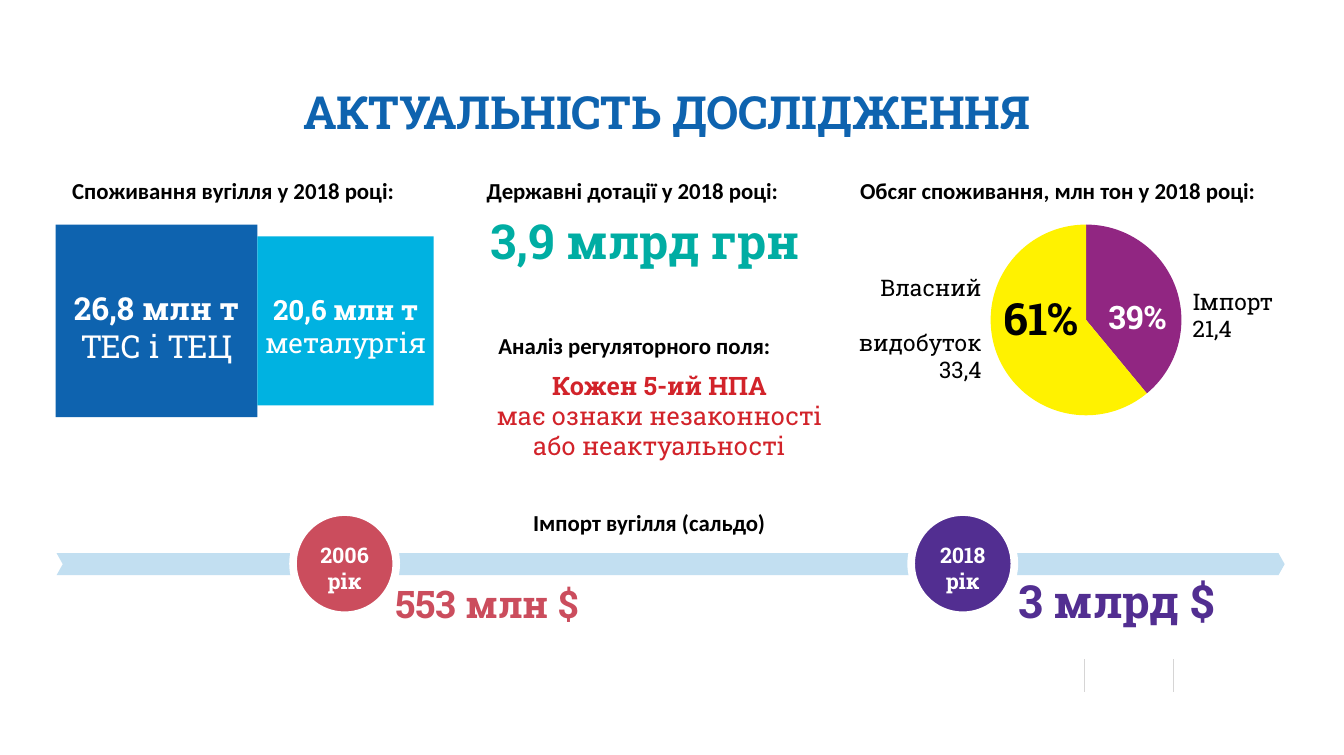
"""Build the slide on the relevance of the coal market study."""
from dataclasses import dataclass

import lxml.etree
import pptx
import pptx.chart.data
import pptx.dml.color
import pptx.enum.chart
import pptx.enum.shapes
import pptx.enum.text
import pptx.oxml
import pptx.oxml.ns
import pptx.util

PX = 9144
SLAB = "Roboto Slab"
WHITE = "FFFFFF"
BLACK = "000000"
CRIMSON = "CB4D5D"
VIOLET = "522E91"
RED = "D2232A"
LEFT = pptx.enum.text.PP_ALIGN.LEFT
CENTER = pptx.enum.text.PP_ALIGN.CENTER
RIGHT = pptx.enum.text.PP_ALIGN.RIGHT
SHAPES = pptx.enum.shapes.MSO_SHAPE


@dataclass(frozen=True)
class Style:
    """Character format; tracking is in hundredths of a point."""
    size: float
    colour: str
    bold: bool = True
    font: str = SLAB
    tracking: int = -5


@dataclass(frozen=True)
class Line:
    """One paragraph with a single style."""
    text: str
    style: Style
    before: float = 0


@dataclass(frozen=True)
class Label:
    """A text box placed in px."""
    left: int
    top: int
    width: int
    height: int
    lines: tuple[Line, ...]
    align: pptx.enum.text.PP_ALIGN = LEFT


@dataclass(frozen=True)
class Block:
    """A filled shape carrying centred text."""
    kind: SHAPES
    left: int
    top: int
    width: int
    height: int
    fill: str
    lines: tuple[Line, ...] = ()
    inset: int = 0
    outline: float = 0
    middle: bool = False


@dataclass(frozen=True)
class Slice:
    """One sector of the consumption pie, in percent."""
    name: str
    share: int
    colour: str


HEADING = Style(18, BLACK, font="Calibri", tracking=-2)
PLAIN = Style(18, BLACK, bold=False)
MINED = Style(18, BLACK, bold=False, tracking=0)
YEAR = Style(17, WHITE)

BLOCKS = (
    Block(SHAPES.RECTANGLE, 61, 246, 221, 211, "0E63AF",
          (Line("26,8 млн т", Style(25, WHITE, tracking=5)),
           Line("ТЕС і ТЕЦ", Style(25, WHITE, False, tracking=5))), 70),
    Block(SHAPES.RECTANGLE, 282, 259, 193, 185, "00B2E1",
          (Line("20,6 млн т", Style(22, WHITE)),
           Line("металургія", Style(22, WHITE, False))), 61),
    Block(SHAPES.CHEVRON, 62, 606, 1345, 24, "C2DFF1"),
    *(Block(SHAPES.OVAL, left, 561, 113, 113, colour,
            (Line(year, YEAR), Line("рік", YEAR)), 9, 6, True)
      for left, year, colour in ((998, "2018", VIOLET), (321, "2006", CRIMSON))),
)

HEADINGS = (
    (79, 193, 400, "Споживання вугілля у 2018 році:"),
    (533, 193, 370, "Державні дотації у 2018 році:"),
    (942, 193, 490, "Обсяг споживання, млн тон у 2018 році:"),
    (546, 363, 350, "Аналіз регуляторного поля:"),
    (584, 557, 300, "Імпорт вугілля (сальдо)"),
)

LABELS = (
    *(Label(left, top, width, 31, (Line(text, HEADING),))
      for left, top, width, text in HEADINGS),
    Label(537, 232, 380, 64, (Line("3,9 млрд грн", Style(38, "00ADA3")),)),
    Label(1099, 319, 95, 61, (Line("61%", Style(35, BLACK, tracking=-10)),)),
    Label(1214, 325, 77, 45, (Line("39%", Style(25.5, WHITE, tracking=0)),)),
    Label(925, 300, 150, 120,
          (Line("Власний", MINED), Line("видобуток", MINED, 21.6), Line("33,4", MINED)), RIGHT),
    Label(1306, 315, 110, 63, (Line("Імпорт", PLAIN), Line("21,4", PLAIN))),
    Label(433, 636, 225, 53, (Line("553 млн $", Style(30, CRIMSON)),)),
    Label(1115, 627, 240, 63, (Line("3 млрд $", Style(36, VIOLET)),)),
    Label(537, 405, 370, 101,
          (Line("Кожен 5-ий НПА", Style(20, RED)),
           Line("має ознаки незаконності або неактуальності",
                Style(20, RED, False))), CENTER),
    Label(313, 92, 836, 63,
          (Line("АКТУАЛЬНІСТЬ ДОСЛІДЖЕННЯ", Style(36, "0E63AF", tracking=-20)),), CENTER),
)

SLICES = (Slice("Імпорт", 39, "912682"), Slice("Власний видобуток", 61, "FFF200"))


def px(*lengths: int) -> list[int]:
    """Turn px lengths into EMU."""
    return [pptx.util.Emu(length * PX) for length in lengths]


def paint(target, colour: str) -> None:
    """Give a fill or font colour holder a solid hex colour."""
    target.fill.solid()
    target.fill.fore_color.rgb = pptx.dml.color.RGBColor.from_string(colour)


def apply(target, values: dict) -> None:
    """Set every attribute named in a dict."""
    for name, value in values.items():
        setattr(target, name, value)


def write(box, lines: tuple[Line, ...], align, inset: int = 0, middle: bool = False) -> None:
    """Write styled paragraphs into a shape."""
    anchor = pptx.enum.text.MSO_ANCHOR
    frame = box.text_frame
    apply(frame, {"word_wrap": True, "margin_left": 0, "margin_right": 0, "margin_bottom": 0,
                  "margin_top": px(inset)[0],
                  "vertical_anchor": anchor.MIDDLE if middle else anchor.TOP})
    for index, line in enumerate(lines):
        para = frame.add_paragraph() if index else frame.paragraphs[0]
        para.alignment = align
        if line.before:
            para.space_before = pptx.util.Pt(line.before)
        span = para.add_run()
        span.text = line.text
        style = line.style
        apply(span.font, {"name": style.font, "size": pptx.util.Pt(style.size), "bold": style.bold})
        paint(span.font, style.colour)
        span.font._element.set("spc", str(style.tracking))


def draw_block(page, block: Block) -> None:
    """Draw a filled shape with its text."""
    box = page.shapes.add_shape(block.kind, *px(block.left, block.top, block.width, block.height))
    box.shadow.inherit = False
    paint(box, block.fill)
    if block.kind == SHAPES.CHEVRON:
        box.adjustments[0] = 0.28
    if block.outline:
        paint(box.line, WHITE)
        box.line.width = pptx.util.Pt(block.outline)
    else:
        box.line.fill.background()
    if block.lines:
        write(box, block.lines, CENTER, block.inset, block.middle)


def draw_label(page, label: Label) -> None:
    """Draw a text box."""
    box = page.shapes.add_textbox(*px(label.left, label.top, label.width, label.height))
    write(box, label.lines, label.align)


def draw_pie(page, slices: tuple[Slice, ...]) -> None:
    """Draw the consumption pie so that it fills its frame."""
    data = pptx.chart.data.CategoryChartData()
    data.categories = [part.name for part in slices]
    data.add_series("Обсяг споживання", [part.share for part in slices])
    chart = page.shapes.add_chart(pptx.enum.chart.XL_CHART_TYPE.PIE,
                                  *px(1085, 246, 209, 209), data).chart
    apply(chart, {"has_legend": False, "has_title": False})
    apply(chart.font, {"name": SLAB, "size": pptx.util.Pt(18)})
    plot = chart.plots[0]
    plot.vary_by_categories = True
    for index, part in enumerate(slices):
        point = plot.series[0].points[index]
        paint(point.format, part.colour)
        point.format.line.fill.background()
    name = pptx.oxml.ns.qn
    area = chart.element.find(".//" + name("c:plotArea"))
    for old in area.findall(name("c:layout")):
        area.remove(old)
    layout = lxml.etree.Element(name("c:layout"))
    manual = lxml.etree.SubElement(layout, name("c:manualLayout"))
    for tag, value in (("layoutTarget", "inner"), ("xMode", "edge"), ("yMode", "edge"),
                       ("x", "0"), ("y", "0"), ("w", "1"), ("h", "1")):
        lxml.etree.SubElement(manual, name("c:" + tag)).set("val", value)
    area.insert(0, layout)


def draw_divider(page, left: int) -> None:
    """Draw a thin vertical footer line."""
    rule = page.shapes.add_connector(pptx.enum.shapes.MSO_CONNECTOR.STRAIGHT,
                                     *px(left, 722, left, 758))
    paint(rule.line, "D6D5D5")
    rule.line.width = pptx.util.Pt(0.46)
    lxml.etree.SubElement(rule._element.spPr, pptx.oxml.ns.qn("a:effectLst"))


def main() -> None:
    """Build and save the deck."""
    deck = pptx.Presentation()
    deck.slide_width, deck.slide_height = px(1472, 827)
    page = deck.slides.add_slide(deck.slide_layouts[6])
    for left in (1188, 1285):
        draw_divider(page, left)
    for block in BLOCKS:
        draw_block(page, block)
    draw_pie(page, SLICES)
    for label in LABELS:
        draw_label(page, label)
    deck.save("out.pptx")


if __name__ == "__main__":
    main()
